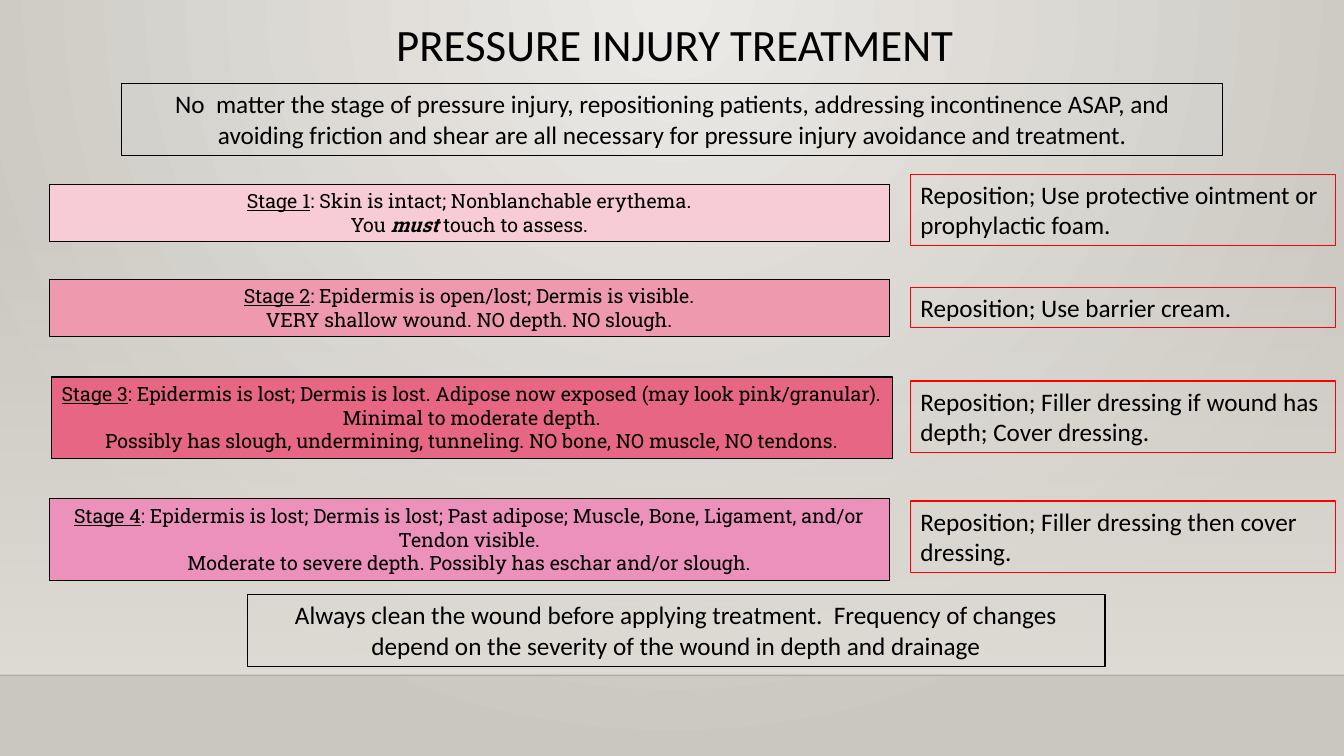
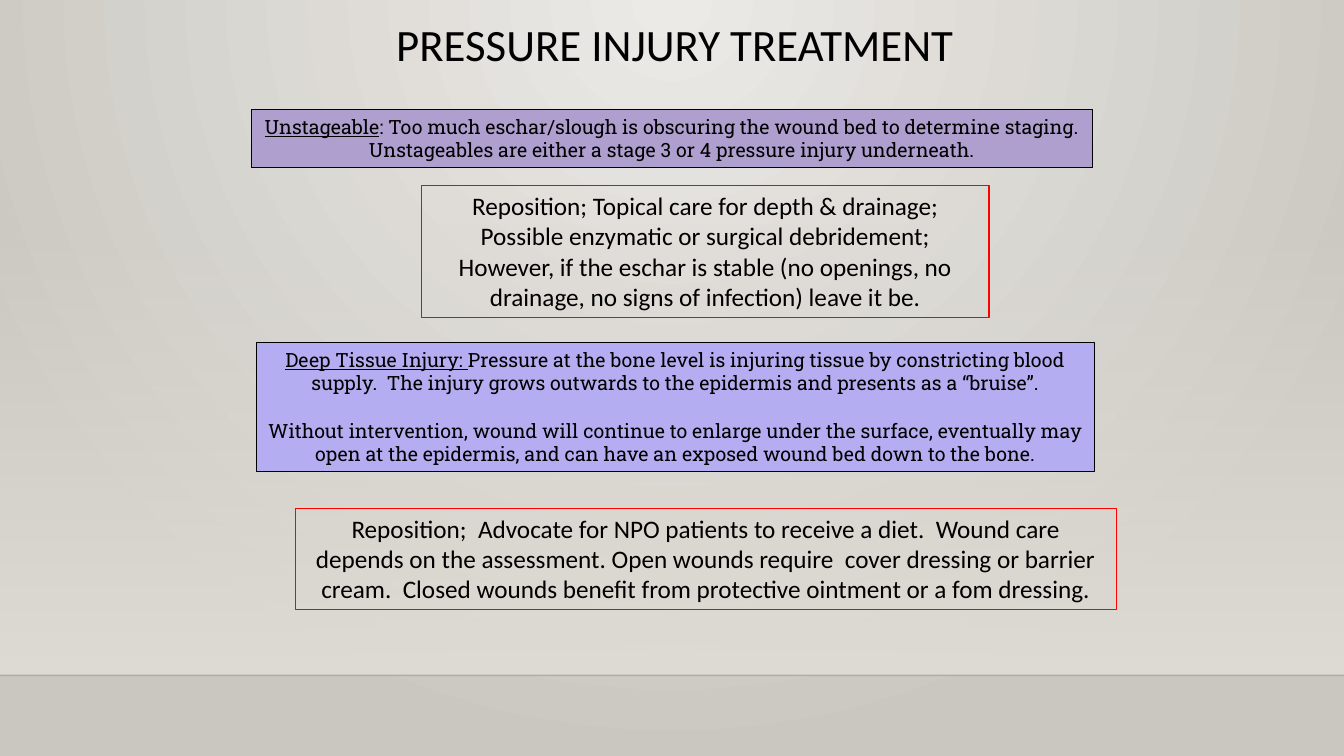
from dataclasses import dataclass
from typing import NamedTuple

from pptx import Presentation
from pptx.dml.color import RGBColor
from pptx.enum.shapes import MSO_CONNECTOR, MSO_SHAPE
from pptx.enum.text import MSO_ANCHOR, MSO_AUTO_SIZE, PP_ALIGN
from pptx.oxml import parse_xml
from pptx.oxml.ns import nsdecls, qn
from pptx.util import Inches, Pt

BLACK = RGBColor(0x00, 0x00, 0x00)
RED = RGBColor(0xFF, 0x00, 0x00)
PALE = RGBColor(0xF7, 0xCC, 0xD6)
PINK = RGBColor(0xEE, 0x99, 0xAD)
ROSE = RGBColor(0xE6, 0x66, 0x84)
ORCHID = RGBColor(0xEB, 0x91, 0xBB)
MAUVE = RGBColor(0xAF, 0x9F, 0xCF)
LILAC = RGBColor(0xB5, 0xAD, 0xF1)
LIGHT = RGBColor(0xEC, 0xEA, 0xE7)
DARK = RGBColor(0xCA, 0xC7, 0xC1)
WALL = RGBColor(0xDF, 0xDB, 0xD5)

SANS, SLAB = "Calibri", "Roboto Slab"
WIDE, HIGH, FLOOR = 13.33, 7.5, 6.7
TITLE = "PRESSURE INJURY TREATMENT"


class Run(NamedTuple):
    text: str
    under: bool = False
    strong: bool = False


@dataclass
class Stage:
    """Filled box that describes one kind of injury."""
    at: tuple
    fill: RGBColor
    name: str
    paras: list
    gap: float = 0


@dataclass
class Note:
    """Outlined box with advice."""
    at: tuple
    text: str
    line: RGBColor = RED
    align: PP_ALIGN = PP_ALIGN.CENTER


def write(frame, paras: list, *, size=18, font=SANS, align=PP_ALIGN.CENTER,
          gap=0, lead=None, anchor=MSO_ANCHOR.TOP) -> None:
    frame.word_wrap = True
    frame.vertical_anchor = anchor
    for i, runs in enumerate(paras):
        para = frame.add_paragraph() if i else frame.paragraphs[0]
        para.alignment = align
        if lead:
            para.line_spacing = lead
        if i and gap:
            para.space_before = Pt(gap)
        for item in runs:
            run = para.add_run()
            run.text = item.text
            face = run.font
            face.name, face.size = font, Pt(size)
            face.color.rgb = BLACK
            face.underline = item.under
            face.bold = face.italic = item.strong


def add_box(slide, at: tuple, fill=None, line=None):
    box = slide.shapes.add_shape(MSO_SHAPE.RECTANGLE, *map(Inches, at))
    box.shadow.inherit = False
    if fill is None:
        box.fill.background()
    else:
        box.fill.solid()
        box.fill.fore_color.rgb = fill
    if line is None:
        box.line.fill.background()
    else:
        box.line.color.rgb = line
        box.line.width = Pt(0.75)
    return box


def set_grad(root, first: RGBColor, last: RGBColor, path: str, alpha="") -> None:
    """Swap the default gradient under root for a two-stop one."""
    old = next(root.iter(qn("a:gradFill")))
    new = parse_xml(
        f'<a:gradFill {nsdecls("a")} rotWithShape="1"><a:gsLst>'
        f'<a:gs pos="0"><a:srgbClr val="{first}">{alpha}</a:srgbClr></a:gs>'
        f'<a:gs pos="100000"><a:srgbClr val="{last}"/></a:gs>'
        f'</a:gsLst>{path}</a:gradFill>')
    old.getparent().replace(old, new)


def add_page(deck):
    """Blank slide with the shared backdrop, floor line and title."""
    slide = deck.slides.add_slide(deck.slide_layouts[6])
    # Backdrop
    slide.background.fill.gradient()
    set_grad(slide.element, LIGHT, DARK,
             '<a:path path="circle"><a:fillToRect l="43000" t="0" '
             'r="43000" b="100000"/></a:path>')
    wall = add_box(slide, (0, 2.21, WIDE, 4.49))
    wall.fill.gradient()
    set_grad(wall.element.spPr, WALL, WALL, '<a:lin ang="5400000" scaled="0"/>',
             '<a:alpha val="0"/>')
    # Floor line
    edge = slide.shapes.add_connector(
        MSO_CONNECTOR.STRAIGHT, Inches(0), Inches(FLOOR), Inches(WIDE), Inches(FLOOR))
    edge.line.color.rgb = BLACK
    edge.line.width = Pt(1)
    tint = next(edge.element.spPr.iter(qn("a:srgbClr")))
    tint.append(parse_xml(f'<a:alpha {nsdecls("a")} val="20000"/>'))
    edge.element.spPr.append(parse_xml(f'<a:effectLst {nsdecls("a")}/>'))
    # Title
    head = slide.shapes.add_textbox(*map(Inches, (1.92, 0.15, 9.55, 0.63)))
    write(head.text_frame, [[Run(TITLE)]], size=32, lead=0.9,
          anchor=MSO_ANCHOR.MIDDLE)
    return slide


def add_stage(slide, item: Stage) -> None:
    frame = add_box(slide, item.at, item.fill, BLACK).text_frame
    first, *rest = item.paras
    write(frame, [[Run(item.name, under=True), *first], *rest],
          size=14, font=SLAB, gap=item.gap)
    frame.auto_size = MSO_AUTO_SIZE.SHAPE_TO_FIT_TEXT


def add_note(slide, item: Note) -> None:
    frame = add_box(slide, item.at, line=item.line).text_frame
    write(frame, [[Run(item.text)]], align=item.align)
    frame.auto_size = MSO_AUTO_SIZE.SHAPE_TO_FIT_TEXT


def side(top: float, high: float, text: str) -> Note:
    """Advice in the right-hand column."""
    return Note((9.03, top, 4.22, high), text, align=PP_ALIGN.LEFT)


STAGED = [
    Stage((0.49, 1.83, 8.33, 0.57), PALE, "Stage 1", [
        [Run(": Skin is intact; Nonblanchable erythema.")],
        [Run("You "), Run("must", strong=True), Run(" touch to assess.")]]),
    Stage((0.49, 2.77, 8.33, 0.57), PINK, "Stage 2", [
        [Run(": Epidermis is open/lost; Dermis is visible.")],
        [Run("VERY shallow wound. NO depth. NO slough.")]]),
    Stage((0.51, 3.74, 8.34, 0.81), ROSE, "Stage 3", [
        [Run(": Epidermis is lost; Dermis is lost. Adipose now exposed "
             "(may look pink/granular). Minimal to moderate depth.")],
        [Run("Possibly has slough, undermining, tunneling. "
             "NO bone, NO muscle, NO tendons.")]]),
    Stage((0.49, 4.95, 8.33, 0.81), ORCHID, "Stage 4", [
        [Run(": Epidermis is lost; Dermis is lost; Past adipose; Muscle, Bone, "
             "Ligament, and/or Tendon visible.")],
        [Run("Moderate to severe depth. Possibly has eschar and/or slough.")]]),
    Note((1.21, 0.83, 10.92, 0.71),
         "No  matter the stage of pressure injury, repositioning patients, "
         "addressing incontinence ASAP, and avoiding friction and shear are all "
         "necessary for pressure injury avoidance and treatment.", BLACK),
    side(1.73, 0.71, "Reposition; Use protective ointment or prophylactic foam."),
    side(2.85, 0.4, "Reposition; Use barrier cream."),
    side(3.78, 0.71, "Reposition; Filler dressing if wound has depth; Cover dressing."),
    side(4.97, 0.71, "Reposition; Filler dressing then cover dressing."),
    Note((2.45, 5.9, 8.51, 0.71),
         "Always clean the wound before applying treatment.  Frequency of changes "
         "depend on the severity of the wound in depth and drainage", BLACK),
]

OTHERS = [
    Stage((2.49, 1.09, 8.35, 0.57), MAUVE, "Unstageable", [
        [Run(": Too much eschar/slough is obscuring the wound bed to "
             "determine staging.")],
        [Run("Unstageables are either a stage 3 or 4 pressure injury underneath.")]]),
    Note((4.18, 1.84, 5.63, 1.31),
         "Reposition; Topical care for depth & drainage; Possible enzymatic or "
         "surgical debridement; However, if the eschar is stable (no openings, no "
         "drainage, no signs of infection) leave it be."),
    Stage((2.54, 3.4, 8.32, 1.28), LILAC, "Deep Tissue Injury: ", [
        [Run("Pressure at the bone level is injuring tissue by constricting blood "
             "supply.  The injury grows outwards to the epidermis and presents as "
             "a “bruise”.")],
        [Run("Without intervention, wound will continue to enlarge under the "
             "surface, eventually may open at the epidermis, and can have an "
             "exposed wound bed down to the bone.")]], gap=17),
    Note((2.93, 5.04, 8.14, 1.01),
         "Reposition;  Advocate for NPO patients to receive a diet.  Wound care "
         "depends on the assessment. Open wounds require  cover dressing or barrier "
         "cream.  Closed wounds benefit from protective ointment or a fom dressing."),
]


def main() -> None:
    deck = Presentation()
    deck.slide_width, deck.slide_height = Inches(WIDE), Inches(HIGH)
    for items in (STAGED, OTHERS):
        slide = add_page(deck)
        for item in items:
            draw = add_stage if isinstance(item, Stage) else add_note
            draw(slide, item)
    deck.save("out.pptx")


if __name__ == "__main__":
    main()
